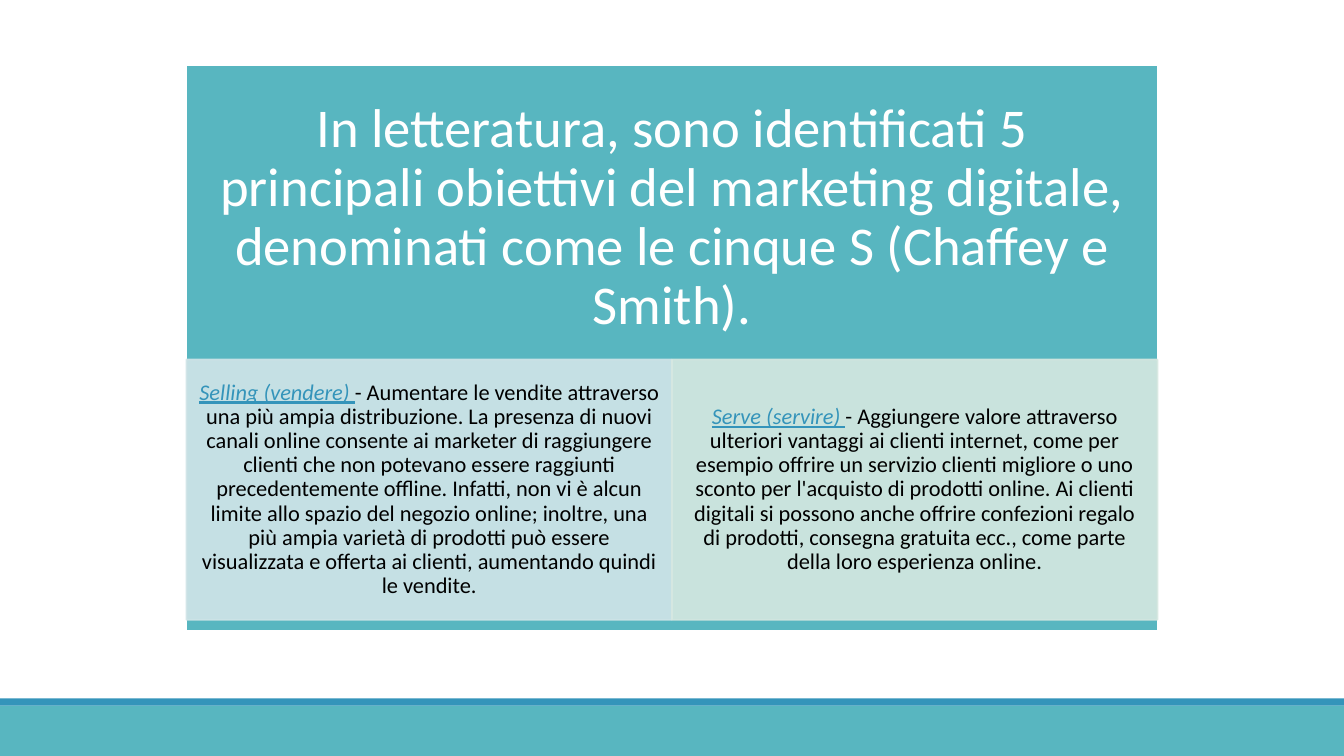
"""Build a slide on the first two of the five S goals of digital marketing."""
from lxml import etree
from pptx import Presentation, util as u
from pptx.dml.color import RGBColor
from pptx.enum import shapes, text
from pptx.oxml.ns import qn

WIDTH, HEIGHT = 13.33, 7.5
TEAL, BLUE, WHITE, BLACK = "58B6C0", "3494BA", "FFFFFF", "000000"

HEADLINE = ("In letteratura, sono identificati 5 principali obiettivi del marketing digitale, "
            "denominati come le cinque S (Chaffey e Smith).")
GOALS = [
    ("Selling (vendere) ",
     "- Aumentare le vendite attraverso una più ampia distribuzione. La presenza di nuovi canali "
     "online consente ai marketer di raggiungere clienti che non potevano essere raggiunti "
     "precedentemente offline. Infatti, non vi è alcun limite allo spazio del negozio online; "
     "inoltre, una più ampia varietà di prodotti può essere visualizzata e offerta ai clienti, "
     "aumentando quindi le vendite.", "D1E5E8"),
    ("Serve (servire) ",
     "- Aggiungere valore attraverso ulteriori vantaggi ai clienti internet, come per esempio "
     "offrire un servizio clienti migliore o uno sconto per l'acquisto di prodotti online. Ai "
     "clienti digitali si possono anche offrire confezioni regalo di prodotti, consegna gratuita "
     "ecc., come parte della loro esperienza online.", "D6E8E1"),
]

PANEL_WIDTH, PANEL_HEIGHT, PANEL_TOP = 9.63, 5.61, 0.65
PANEL_LEFT = (WIDTH - PANEL_WIDTH) / 2
HEADLINE_HEIGHT = PANEL_HEIGHT * 0.54
GOAL_TOP, GOAL_HEIGHT = PANEL_TOP + PANEL_HEIGHT * 0.52, PANEL_HEIGHT * 0.46
GOAL_WIDTH = PANEL_WIDTH / len(GOALS)
FOOTER_TOP, STRIPE_HEIGHT = HEIGHT - 0.5, 0.07


def color(value):
    return RGBColor.from_string(value)


def add_block(slide, left, top, width, height, fill, line=None, opacity=100):
    block = slide.shapes.add_shape(shapes.MSO_SHAPE.RECTANGLE, *map(u.Inches, (left, top, width, height)))
    block.shadow.inherit = False
    block.fill.solid()
    block.fill.fore_color.rgb = color(fill)
    if line:
        block.line.color.rgb = color(line)
        block.line.width = u.Pt(1.25)
    else:
        block.line.fill.background()
    if opacity < 100:
        for tint in block._element.spPr.iter(qn("a:srgbClr")):
            etree.SubElement(tint, qn("a:alpha")).set("val", str(opacity * 1000))
    return block


def write(holder, runs, size, inset_x, inset_y):
    frame = holder.text_frame
    frame.word_wrap = True
    frame.auto_size = text.MSO_AUTO_SIZE.NONE
    frame.vertical_anchor = text.MSO_ANCHOR.MIDDLE
    frame.margin_left = frame.margin_right = u.Inches(inset_x)
    frame.margin_top = frame.margin_bottom = u.Inches(inset_y)
    paragraph = frame.paragraphs[0]
    paragraph.alignment = text.PP_ALIGN.CENTER
    paragraph.line_spacing = 0.9
    for words, ink, emphasis in runs:
        run = paragraph.add_run()
        run.text = words
        run.font.name = "Calibri"
        run.font.size = u.Pt(size)
        run.font.color.rgb = color(ink)
        run.font.italic = run.font.underline = emphasis


def main():
    deck = Presentation()
    deck.slide_width, deck.slide_height = u.Inches(WIDTH), u.Inches(HEIGHT)
    slide = deck.slides.add_slide(deck.slide_layouts[5])

    add_block(slide, 0, FOOTER_TOP, WIDTH, HEIGHT - FOOTER_TOP, TEAL)
    add_block(slide, 0, FOOTER_TOP - STRIPE_HEIGHT, WIDTH, STRIPE_HEIGHT, BLUE)
    panel = add_block(slide, PANEL_LEFT, PANEL_TOP, PANEL_WIDTH, PANEL_HEIGHT, TEAL, WHITE)

    headline = slide.shapes.title
    headline.left, headline.top = u.Inches(PANEL_LEFT), u.Inches(PANEL_TOP)
    headline.width, headline.height = u.Inches(PANEL_WIDTH), u.Inches(HEADLINE_HEIGHT)
    write(headline, [(HEADLINE, WHITE, False)], size=39, inset_x=0.3, inset_y=0.3)
    panel._element.addnext(headline._element)

    for column, (name, description, tint) in enumerate(GOALS):
        goal = add_block(slide, PANEL_LEFT + column * GOAL_WIDTH, GOAL_TOP, GOAL_WIDTH, GOAL_HEIGHT,
                         tint, tint, opacity=90)
        write(goal, [(name, BLUE, True), (description, BLACK, False)],
              size=16, inset_x=0.12, inset_y=0.02)

    deck.save("out.pptx")


if __name__ == "__main__":
    main()
